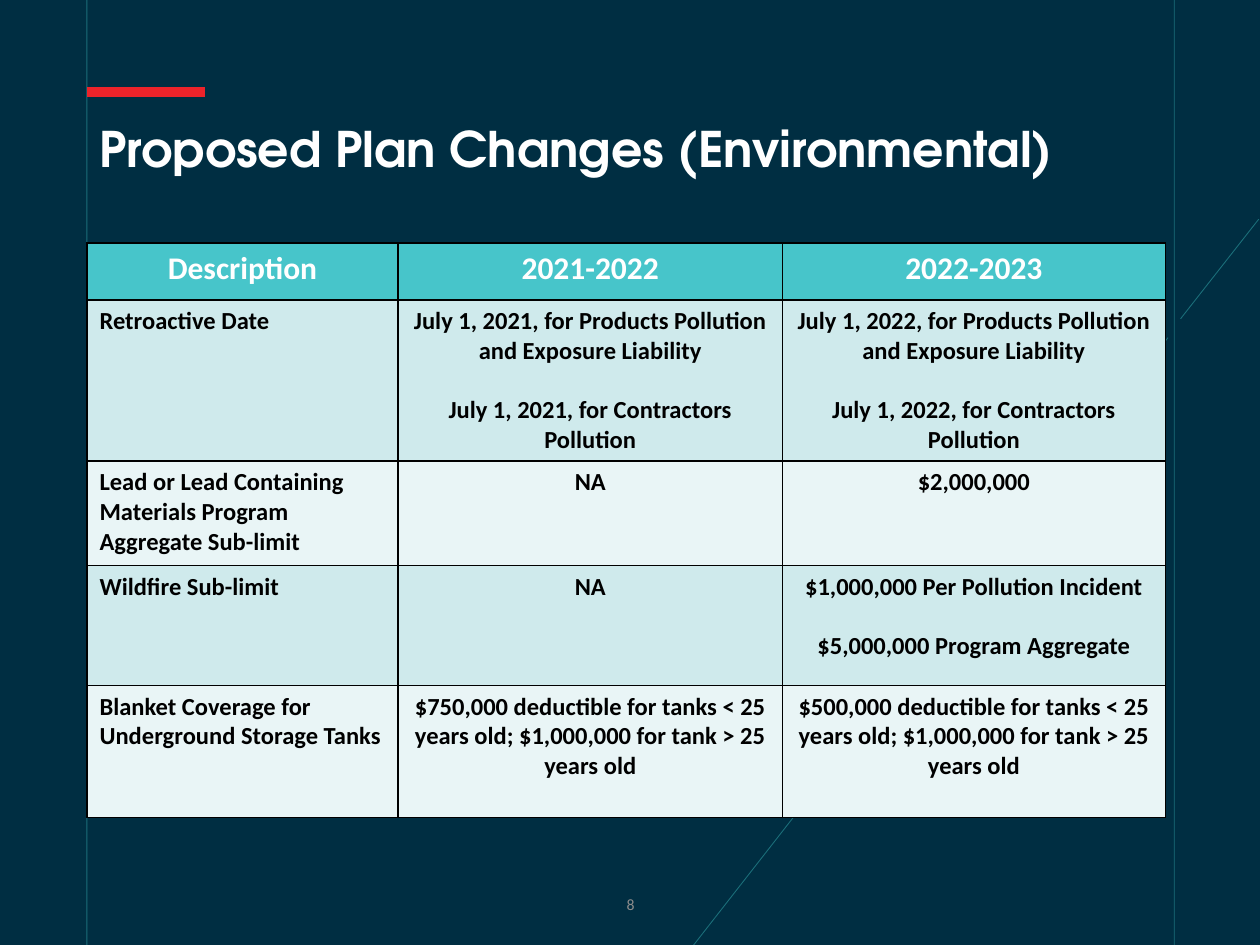
from lxml import etree
from pptx import Presentation
from pptx import util as u
from pptx.dml.color import RGBColor
from pptx.enum import shapes, text
from pptx.oxml.ns import qn

HUES = {
    "back": "002E42", "teal": "2E9B9F", "red": "EC232A", "white": "FFFFFF",
    "gray": "8C8C8C", "black": "000000", "head": "47C5CA",
    "dark": "CFEAEC", "pale": "E9F5F6",
}
MID, LEFT = text.PP_ALIGN.CENTER, text.PP_ALIGN.LEFT


def style(para, size, hue, bold=True, face="Calibri"):
    for run in para.runs:
        run.font.size = u.Pt(size)
        run.font.name = face
        run.font.bold = bold
        run.font.color.rgb = RGBColor.from_string(HUES[hue])


def edge(cell):
    """Draw a thin black border on all four sides of a table cell."""
    props = cell._tc.get_or_add_tcPr()
    for spot, side in enumerate(("lnL", "lnR", "lnT", "lnB")):
        line = etree.Element(qn("a:" + side), w=str(u.Pt(1)))
        fill = etree.SubElement(line, qn("a:solidFill"))
        etree.SubElement(fill, qn("a:srgbClr"), val=HUES["black"])
        props.insert(spot, line)


deck = Presentation()
deck.slide_width, deck.slide_height = u.Inches(10), u.Inches(7.5)
slide = deck.slides.add_slide(deck.slide_layouts[6])
slide.background.fill.solid()
slide.background.fill.fore_color.rgb = RGBColor.from_string(HUES["back"])

# Backdrop lines and the red accent bar
lines = [
    (9.27, 2.68, 5.49, 7.52, "teal", 0.5),
    (0.69, 0, 0.69, 7.52, "teal", 0.5),
    (9.32, 0, 9.32, 7.52, "teal", 0.5),
    (0.69, 0.73, 1.63, 0.73, "red", 6),
    (9.99, 1.74, 9.37, 2.53, "teal", 0.5),
]
for *ends, hue, width in lines:
    line = slide.shapes.add_connector(
        shapes.MSO_CONNECTOR.STRAIGHT, *[u.Inches(n) for n in ends])
    line.line.width = u.Pt(width)
    line.line.color.rgb = RGBColor.from_string(HUES[hue])
    props = line._element.spPr
    if hue == "teal":
        tint = props.find(".//" + qn("a:srgbClr"))
        etree.SubElement(tint, qn("a:alpha"), val="60000")
    etree.SubElement(props, qn("a:effectLst"))

# Title and page number
title = slide.shapes.add_textbox(
    u.Inches(0.69), u.Inches(0.94), u.Inches(8.08), u.Inches(0.82))
title.text_frame.word_wrap = True
title.text_frame.text = "Proposed Plan Changes (Environmental)"
para = title.text_frame.paragraphs[0]
para.line_spacing = 0.9
style(para, 28, "white", face="TeX Gyre Adventor")

page = slide.shapes.add_textbox(
    u.Inches(3.88), u.Inches(6.98), u.Inches(2.25), u.Inches(0.4))
page.text_frame.word_wrap = True
page.text_frame.vertical_anchor = text.MSO_ANCHOR.MIDDLE
page.text_frame.text = "8"
para = page.text_frame.paragraphs[0]
para.alignment = MID
style(para, 9, "gray", bold=False)

# Table of changes; a line break in the text starts a spaced paragraph
rows = [
    ("Description", "2021-2022", "2022-2023"),
    ("Retroactive Date",
     "July 1, 2021, for Products Pollution and Exposure Liability\n"
     "July 1, 2021, for Contractors Pollution",
     "July 1, 2022, for Products Pollution and Exposure Liability\n"
     "July 1, 2022, for Contractors Pollution"),
    ("Lead or Lead Containing Materials Program Aggregate Sub-limit",
     "NA", "$2,000,000"),
    ("Wildfire Sub-limit", "NA",
     "$1,000,000 Per Pollution Incident\n$5,000,000 Program Aggregate"),
    ("Blanket Coverage for Underground Storage Tanks",
     "$750,000 deductible for tanks < 25 years old; "
     "$1,000,000 for tank > 25 years old",
     "$500,000 deductible for tanks < 25 years old; "
     "$1,000,000 for tank > 25 years old"),
]
wide = [2.47, 3.05, 3.04]
high = [0.45, 1.28, 0.83, 0.95, 1.05]
table = slide.shapes.add_table(
    len(rows), len(wide), u.Inches(0.69), u.Inches(1.93),
    u.Inches(sum(wide)), u.Inches(sum(high))).table
for col, width in zip(table.columns, wide):
    col.width = u.Inches(width)
for r, (row, height) in enumerate(zip(rows, high)):
    table.rows[r].height = u.Inches(height)
    shade = "head" if r == 0 else ("pale", "dark")[r % 2]
    for c, words in enumerate(row):
        cell = table.cell(r, c)
        cell.fill.solid()
        cell.fill.fore_color.rgb = RGBColor.from_string(HUES[shade])
        edge(cell)
        cell.text_frame.text = words
        for p, para in enumerate(cell.text_frame.paragraphs):
            para.alignment = LEFT if r and c == 0 else MID
            if p:
                para.space_before = u.Pt(17)
            style(para, 14 if r else 18, "black" if r else "white")

deck.save("out.pptx")
